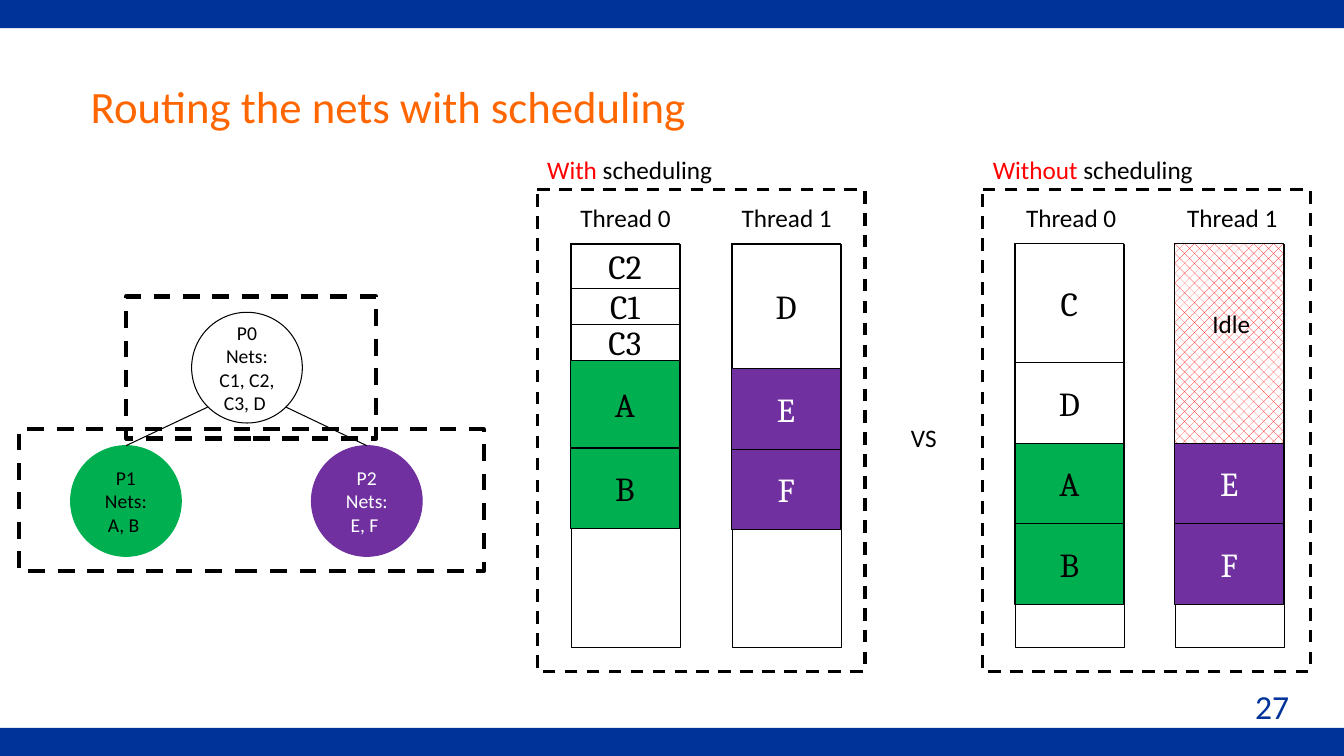
from dataclasses import dataclass

from lxml import etree
from pptx import Presentation
from pptx.dml.color import RGBColor
from pptx.enum.dml import MSO_LINE, MSO_PATTERN
from pptx.enum.shapes import MSO_CONNECTOR, MSO_SHAPE
from pptx.enum.text import MSO_ANCHOR as Anchor, MSO_AUTO_SIZE, PP_ALIGN as Align
from pptx.oxml.ns import qn
from pptx.util import Cm, Pt


@dataclass(frozen=True)
class Theme:
    blue: RGBColor = RGBColor(0x00, 0x33, 0x99)
    orange: RGBColor = RGBColor(0xFF, 0x66, 0x00)
    red: RGBColor = RGBColor(0xFF, 0x00, 0x00)
    green: RGBColor = RGBColor(0x00, 0xB0, 0x50)
    purple: RGBColor = RGBColor(0x70, 0x30, 0xA0)
    black: RGBColor = RGBColor(0x00, 0x00, 0x00)
    white: RGBColor = RGBColor(0xFF, 0xFF, 0xFF)
    sans: str = "Calibri"
    serif: str = "Cambria"
    title_size: int = 32
    net_size: int = 24
    label_size: int = 18
    node_size: int = 14


THEME = Theme()
SLIDE_W, SLIDE_H, BAR_H = 33.87, 19.05, 0.71
LANE_TOP, LANE_W, LANE_H = 6.15, 2.74, 10.16
PANEL_TOP, PANEL_W, PANEL_H = 4.78, 8.26, 12.14
NODE_SIZE = 2.79
LABEL_H = 1.02


def style(paragraph, size, color, face=THEME.sans, align=Align.CENTER):
    paragraph.alignment = align
    paragraph.font.size = Pt(size)
    paragraph.font.name = face
    if color is not None:
        paragraph.font.color.rgb = color


def add_box(slide, x, y, w, h, fill=None, line=THEME.black, weight=0.75,
            dashed=False, kind=MSO_SHAPE.RECTANGLE):
    box = slide.shapes.add_shape(kind, Cm(x), Cm(y), Cm(w), Cm(h))
    box.shadow.inherit = False
    if fill is None:
        box.fill.background()
    else:
        box.fill.solid()
        box.fill.fore_color.rgb = fill
    if line is None:
        box.line.fill.background()
    else:
        box.line.color.rgb = line
        box.line.width = Pt(weight)
    if dashed:
        box.line.dash_style = MSO_LINE.DASH
    return box


def add_label(slide, x, y, w, pieces, size=THEME.label_size, align=Align.CENTER, h=LABEL_H):
    """Write (text, colour) pieces on one line."""
    label = slide.shapes.add_textbox(Cm(x), Cm(y), Cm(w), Cm(h))
    frame = label.text_frame
    frame.word_wrap = True
    frame.auto_size = MSO_AUTO_SIZE.SHAPE_TO_FIT_TEXT
    paragraph = frame.paragraphs[0]
    style(paragraph, size, pieces[0][1] if len(pieces) == 1 else None, align=align)
    for text, color in pieces:
        run = paragraph.add_run()
        run.text = text
        if len(pieces) > 1:
            run.font.color.rgb = color


def text_color(fill):
    return THEME.white if fill == THEME.purple else THEME.black


def add_lane(slide, x, nets):
    """Stack (net, height, fill) blocks down one thread's lane."""
    add_box(slide, x, LANE_TOP, LANE_W, LANE_H)
    y = LANE_TOP - 0.01
    for net, height, fill in nets:
        block = add_box(slide, x - 0.02, y, LANE_W, height, fill)
        if net:
            block.text_frame.text = net
            block.text_frame.vertical_anchor = Anchor.MIDDLE
            style(block.text_frame.paragraphs[0], THEME.net_size, text_color(fill), THEME.serif)
        else:
            block.fill.patterned()
            block.fill.pattern = MSO_PATTERN.PERCENT_30
            block.fill.fore_color.rgb = THEME.red
            block.fill.back_color.rgb = THEME.white
        y += height


def add_panel(slide, x, mode, lanes):
    add_box(slide, x, PANEL_TOP, PANEL_W, PANEL_H, weight=2.25, dashed=True,
            kind=MSO_SHAPE.FLOWCHART_PROCESS)
    add_label(slide, x, 3.76, 7.62, [(mode, THEME.red), (" scheduling", THEME.black)],
              align=Align.LEFT)
    for thread, (lane_x, nets) in enumerate(lanes):
        add_label(slide, x + 0.32 + 4.06 * thread, 4.98, 3.81,
                  [(f"Thread {thread}", THEME.black)])
        add_lane(slide, lane_x, nets)


def add_node(slide, x, y, name, nets, fill=None):
    node = add_box(slide, x, y, NODE_SIZE, NODE_SIZE, fill, fill or THEME.black,
                   kind=MSO_SHAPE.OVAL)
    frame = node.text_frame
    frame.text = f"{name}\nNets: {nets} "
    frame.vertical_anchor = Anchor.MIDDLE
    for paragraph in frame.paragraphs:
        style(paragraph, THEME.node_size, text_color(fill))
    return node


def add_branch(slide, x, y, child):
    branch = slide.shapes.add_connector(MSO_CONNECTOR.STRAIGHT, Cm(x), Cm(y), Cm(x), Cm(y))
    branch.end_connect(child, 0)
    branch.line.color.rgb = THEME.black
    branch.line.width = Pt(0.75)
    etree.SubElement(branch._element.spPr, qn("a:effectLst"))


def add_title(slide, text):
    title = slide.shapes.title
    title.left, title.top, title.width, title.height = Cm(2.03), Cm(1.07), Cm(24.16), Cm(3.18)
    title.text_frame.text = text
    title.text_frame.vertical_anchor = Anchor.MIDDLE
    style(title.text_frame.paragraphs[0], THEME.title_size, THEME.orange, align=Align.LEFT)


def main():
    deck = Presentation()
    deck.slide_width, deck.slide_height = Cm(SLIDE_W), Cm(SLIDE_H)
    slide = deck.slides.add_slide(deck.slide_layouts[5])

    # Frame of the page
    for bar_y in (0, SLIDE_H - BAR_H):
        add_box(slide, 0, bar_y, SLIDE_W, BAR_H, THEME.blue, None)
    add_title(slide, "Routing the nets with scheduling")
    add_label(slide, 25.68, 17.15, 7.06, [("27", THEME.blue)], THEME.net_size, Align.RIGHT, 1.27)

    # Thread timelines
    step = 2.03
    green_a, green_b = ("A", step, THEME.green), ("B", step, THEME.green)
    purple = [("E", step, THEME.purple), ("F", step, THEME.purple)]
    add_panel(slide, 13.54, "With", [
        (14.4, [("C2", 1.12, None), ("C1", 0.91, None), ("C3", 0.91, None),
                ("A", 2.21, THEME.green), green_b]),
        (18.46, [("D", 3.15, None), *purple]),
    ])
    add_panel(slide, 24.77, "Without", [
        (25.6, [("C", 3, THEME.white), ("D", step, THEME.white), green_a, green_b]),
        (29.63, [(None, 3 + step, None), *purple]),
    ])
    add_label(slide, 28.4, 7.65, 5.26, [("Idle", THEME.black)])
    add_label(slide, 22.43, 10.52, 1.7, [("VS", THEME.black)])

    # Partition tree
    add_node(slide, 4.83, 7.87, "P0", "C1, C2, C3, D")
    left_part = add_node(slide, 1.78, 11.23, "P1", "A, B", THEME.green)
    right_part = add_node(slide, 7.85, 11.23, "P2", "E, F", THEME.purple)
    add_branch(slide, 5.23, 10.26, left_part)
    add_branch(slide, 7.21, 10.26, right_part)

    # Tree levels
    for level_x, level_y, level_w in ((3.18, 7.47, 6.3), (0.48, 10.82, 11.71)):
        add_box(slide, level_x, level_y, level_w, 3.58, weight=3, dashed=True)

    deck.save("out.pptx")


if __name__ == "__main__":
    main()
